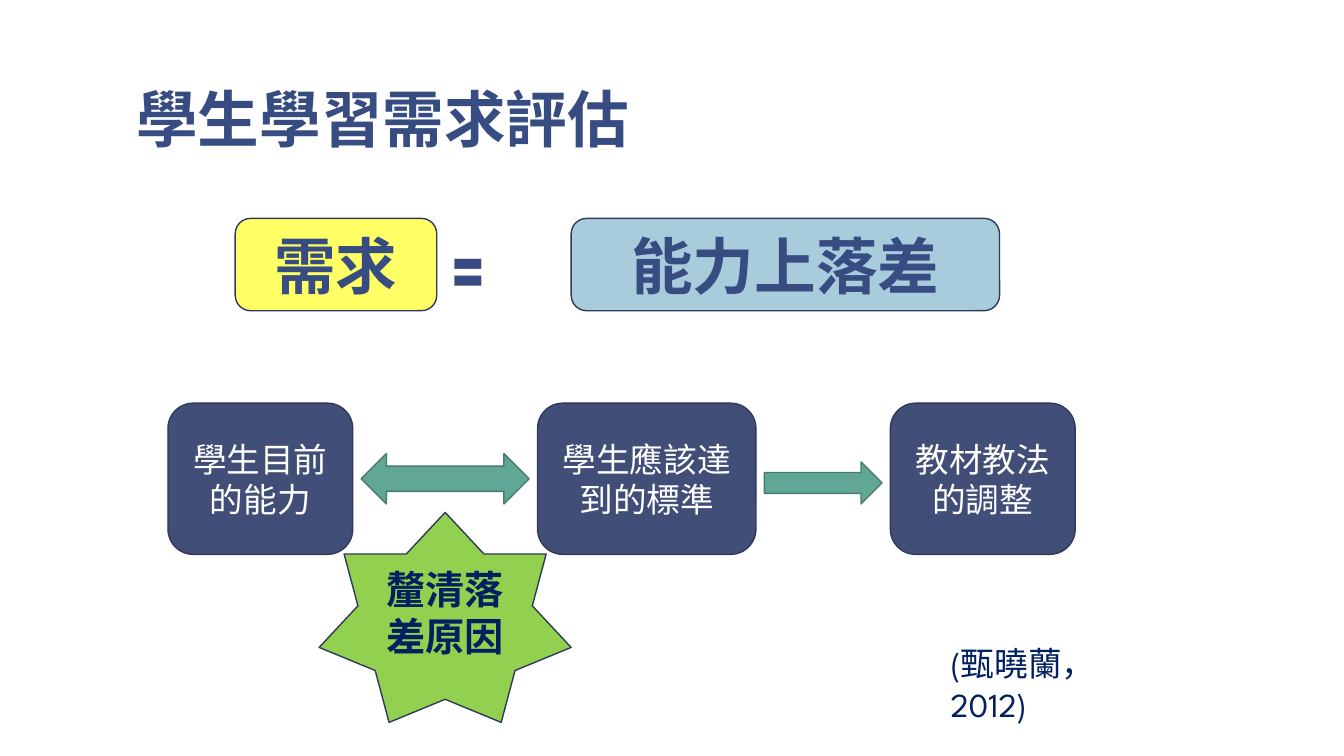
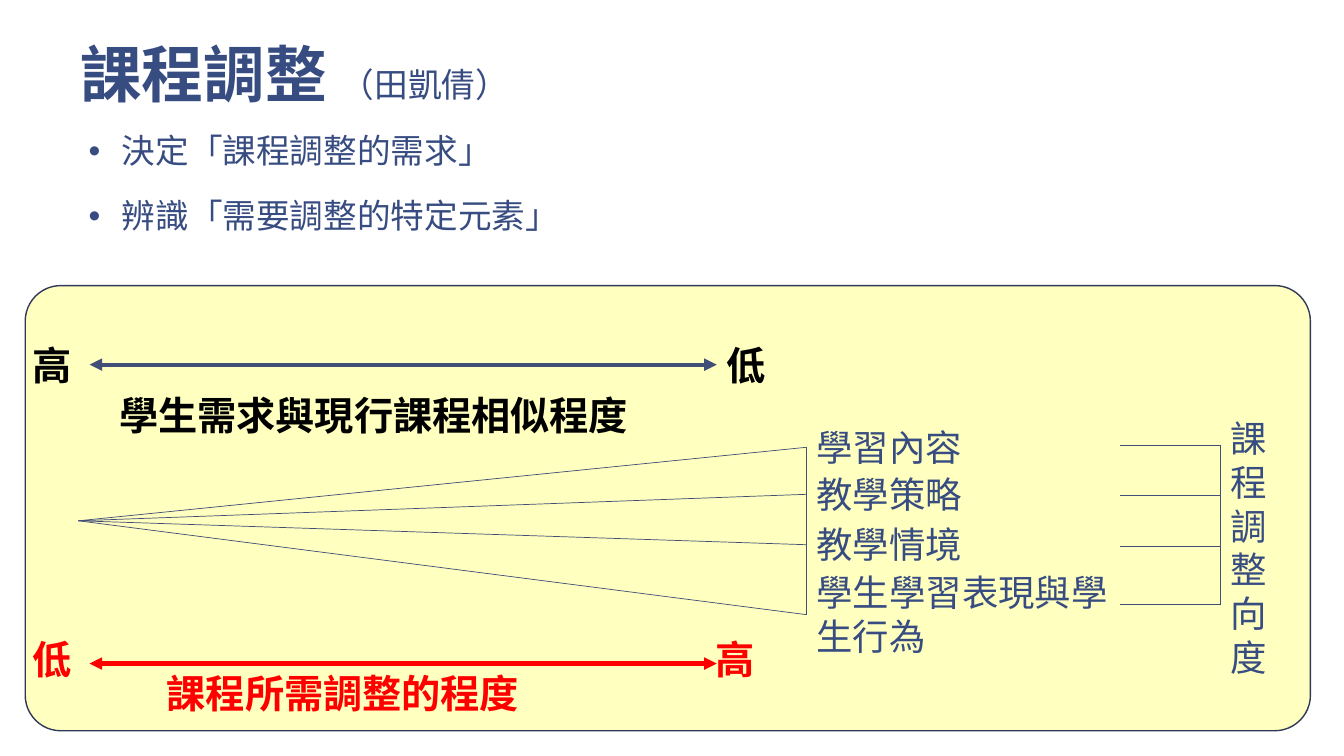
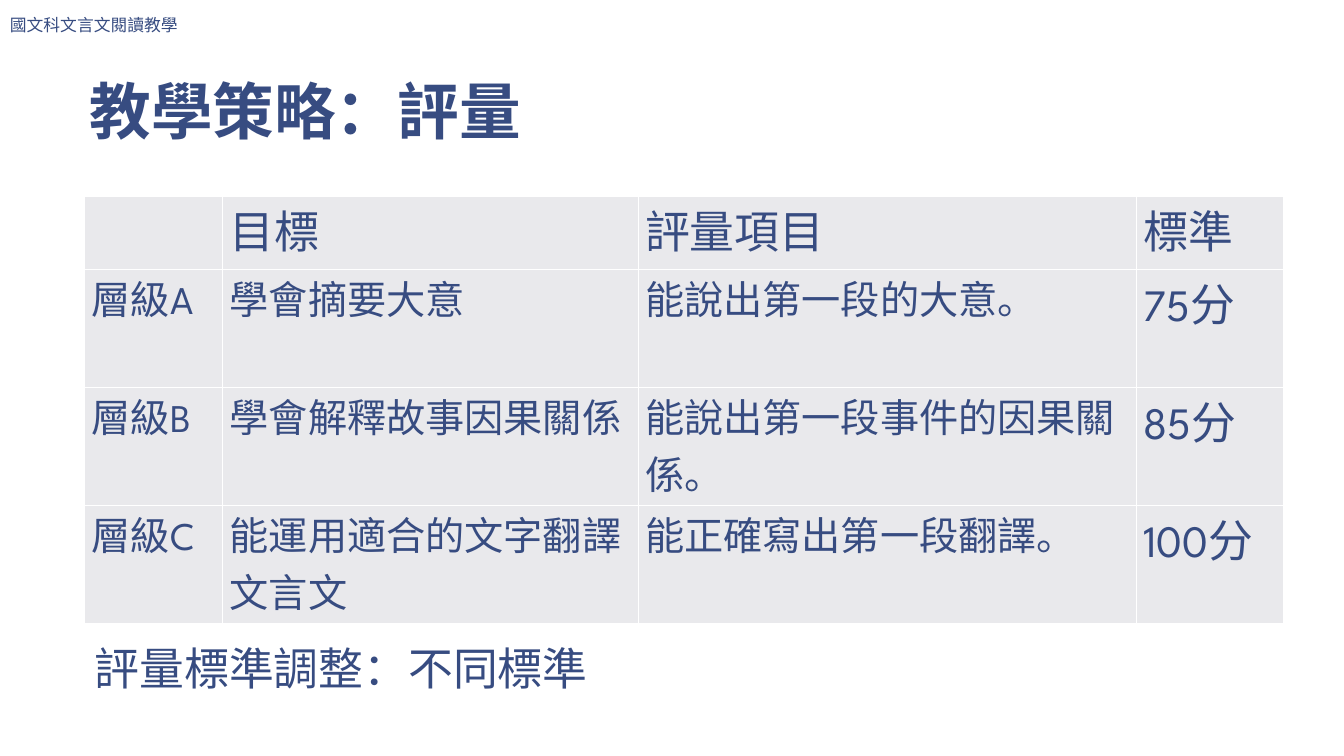
from dataclasses import dataclass
from typing import NamedTuple, Optional

from lxml.etree import SubElement
from pptx import Presentation
from pptx.dml.color import RGBColor
from pptx.enum.shapes import MSO_CONNECTOR, MSO_SHAPE
from pptx.enum.text import MSO_ANCHOR, PP_ALIGN
from pptx.oxml.ns import qn
from pptx.util import Inches, Pt

COLUMNS, ROWS = 160, 90
SLIDE_WIDTH, SLIDE_HEIGHT = Inches(13.33), Inches(7.5)
COLORS = {
    "ink": "374C81", "navy": "414E77", "outline": "303A58", "deep": "002060",
    "white": "FFFFFF", "black": "000000", "red": "FF0000",
    "need": "FFFF66", "gap": "A9CCDC", "star": "92D050",
    "arrow": "61A796", "arrow_edge": "487C6F", "panel": "FFFF00", "cell": "E9E9EC",
}
BODY_FONT, TITLE_FONT, HEADER_FONT = "League Spartan", "Arial", "Times New Roman"
LEFT_SIDE, RIGHT_SIDE = 1, 3
TITLE_INSETS = (0.13, 0.07)


class Area(NamedTuple):
    column: float
    row: float
    columns: float
    rows: float


@dataclass(frozen=True)
class TextStyle:
    size: float
    color: str = "ink"
    bold: bool = False
    font: str = BODY_FONT


@dataclass(frozen=True)
class Block:
    area: Area
    fill: str
    words: str = ""
    style: TextStyle = TextStyle(24, "white")
    outline: str = "outline"
    preset: MSO_SHAPE = MSO_SHAPE.ROUNDED_RECTANGLE


@dataclass(frozen=True)
class Scale:
    color: str
    line_color: str
    start: str
    start_area: Area
    end: str
    end_area: Area
    caption: str
    caption_area: Area
    line_row: Optional[float] = None


@dataclass(frozen=True)
class Dimension:
    words: str
    area: Area
    bracket_row: float


TITLE = TextStyle(44, bold=True, font=TITLE_FONT)
BULLET = TextStyle(24, font=TITLE_FONT)
DIMENSION = TextStyle(26)

NEED_BLOCKS = [
    Block(Area(28, 26, 24, 11), "need", "需求", TITLE),
    Block(Area(68, 26, 51, 11), "gap", "能力上落差", TITLE),
    Block(Area(20, 48, 22, 18), "navy", "學生目前的能力"),
    Block(Area(64, 48, 26, 18), "navy", "學生應該達到的標準"),
    Block(Area(106, 48, 22, 18), "navy", "教材教法的調整"),
    Block(Area(38, 61, 30, 25), "star", "釐清落差原因",
          TextStyle(28, "deep", True), preset=MSO_SHAPE.STAR_7_POINT),
    Block(Area(43, 54, 20, 6), "arrow", outline="arrow_edge",
          preset=MSO_SHAPE.LEFT_RIGHT_ARROW),
    Block(Area(91, 55, 14, 5), "arrow", outline="arrow_edge",
          preset=MSO_SHAPE.RIGHT_ARROW),
]
SCALES = [
    Scale("black", "navy", "高", Area(2.67, 40, 8, 6.83), "低", Area(85.33, 40, 8, 6.83),
          "學生需求與現行課程相似程度", Area(13, 46, 69.33, 6.83)),
    Scale("red", "red", "低", Area(2.67, 75.1, 8, 6.83), "高", Area(84, 75, 8, 6.83),
          "課程所需調整的程度", Area(18.67, 79.1, 60, 6.83), 79),
]
DIMENSIONS = [
    Dimension("學習內容", Area(96, 50, 28, 6.5), 53),
    Dimension("教學策略", Area(96, 55.6, 28, 6.5), 59),
    Dimension("教學情境", Area(96, 61.6, 28, 6.5), 65),
    Dimension("學生學習表現與學生行為", Area(96, 67.3, 40, 11.75), 72),
]
FAN_ORIGIN = (9.33, 62)
BRACKET_LEFT, BRACKET_RIGHT = 133.33, 145.33
LEVELS = [
    ("", "目標", "評量項目", "標準"),
    ("層級A", "學會摘要大意", "能說出第一段的大意。", "75分"),
    ("層級B", "學會解釋故事因果關係", "能說出第一段事件的因果關係。", "85分"),
    ("層級C", "能運用適合的文字翻譯文言文", "能正確寫出第一段翻譯。", "100分"),
]
LEVEL_WIDTHS = (1.37, 4.12, 4.94, 1.46)
LEVEL_HEIGHTS = (0.73, 1.17, 1.17, 1.17)


def rgb(name: str) -> RGBColor:
    return RGBColor.from_string(COLORS[name])


def across(columns: float) -> int:
    return round(SLIDE_WIDTH * columns / COLUMNS)


def down(rows: float) -> int:
    return round(SLIDE_HEIGHT * rows / ROWS)


def place(area: Area) -> tuple:
    return across(area.column), down(area.row), across(area.columns), down(area.rows)


def style_run(run, style: TextStyle) -> None:
    run.font.name = style.font
    run.font.size = Pt(style.size)
    run.font.bold = style.bold
    run.font.color.rgb = rgb(style.color)


def style_frame(frame, style: TextStyle) -> None:
    for paragraph in frame.paragraphs:
        for run in paragraph.runs:
            style_run(run, style)


def add_words(slide, words: str, area: Area, style: TextStyle,
              insets: tuple = (0.1, 0.05), anchor=MSO_ANCHOR.TOP):
    box = slide.shapes.add_textbox(*place(area))
    frame = box.text_frame
    frame.word_wrap = True
    frame.vertical_anchor = anchor
    frame.margin_left = frame.margin_right = Inches(insets[0])
    frame.margin_top = frame.margin_bottom = Inches(insets[1])
    frame.text = words
    style_frame(frame, style)
    return box


def add_title(slide, words: str, area: Area):
    title = add_words(slide, words, area, TITLE, TITLE_INSETS, MSO_ANCHOR.BOTTOM)
    title.text_frame.paragraphs[0].line_spacing = 0.85
    return title


def add_block(slide, block: Block):
    shape = slide.shapes.add_shape(block.preset, *place(block.area))
    shape.shadow.inherit = False
    shape.fill.solid()
    shape.fill.fore_color.rgb = rgb(block.fill)
    shape.line.color.rgb = rgb(block.outline)
    shape.line.width = Pt(1)
    if block.words:
        frame = shape.text_frame
        frame.text = block.words
        frame.vertical_anchor = MSO_ANCHOR.MIDDLE
        frame.paragraphs[0].alignment = PP_ALIGN.CENTER
        style_frame(frame, block.style)
    return shape


def add_line(slide, start: tuple, end: tuple, color: str = "navy",
             width: float = 0.5, arrows: bool = False):
    line = slide.shapes.add_connector(
        MSO_CONNECTOR.STRAIGHT, across(start[0]), down(start[1]), across(end[0]), down(end[1]))
    line.line.color.rgb = rgb(color)
    line.line.width = Pt(width)
    if arrows:
        for tag in ("a:headEnd", "a:tailEnd"):
            SubElement(line.line._get_or_add_ln(), qn(tag), type="triangle")
    SubElement(line._element.spPr, qn("a:effectLst"))
    return line


def add_bullets(slide, words: list, area: Area) -> None:
    box = add_words(slide, "\n".join(words), area, BULLET, TITLE_INSETS)
    for index, paragraph in enumerate(box.text_frame.paragraphs):
        paragraph.line_spacing = 0.95
        if index:
            paragraph.space_before = Pt(18.7)
        properties = paragraph._p.get_or_add_pPr()
        properties.set("marL", str(Inches(0.33)))
        properties.set("indent", str(-Inches(0.33)))
        SubElement(properties, qn("a:buFont"), typeface="Arial")
        SubElement(properties, qn("a:buChar"), char="•")


def add_scale(slide, scale: Scale) -> None:
    style = TextStyle(28, scale.color, True)
    start = add_words(slide, scale.start, scale.start_area, style)
    end = add_words(slide, scale.end, scale.end_area, style)
    add_words(slide, scale.caption, scale.caption_area, style)
    row = scale.line_row or scale.start_area.row + scale.start_area.rows / 2
    line = add_line(slide, (10.67, row), (85.33, row), scale.line_color, 3, True)
    if scale.line_row is None:
        line.begin_connect(start, RIGHT_SIDE)
        line.end_connect(end, LEFT_SIDE)


def add_dimensions(slide) -> None:
    items = []
    for dimension in DIMENSIONS:
        item = add_words(slide, dimension.words, dimension.area, DIMENSION)
        add_line(slide, FAN_ORIGIN, FAN_ORIGIN).end_connect(item, LEFT_SIDE)
        items.append(item)
    edge = add_line(slide, FAN_ORIGIN, FAN_ORIGIN)
    edge.begin_connect(items[0], LEFT_SIDE)
    edge.end_connect(items[-1], LEFT_SIDE)

    heading_area = Area(BRACKET_RIGHT, 49, 9.33, 32)
    heading = add_words(slide, "課程調整向度", heading_area, DIMENSION)
    heading_middle = heading_area.row + heading_area.rows / 2
    bracket_rows = [dimension.bracket_row for dimension in DIMENSIONS]
    for row in bracket_rows:
        branch = add_line(slide, (BRACKET_LEFT, row), (BRACKET_RIGHT, row))
        if row == heading_middle:
            branch.end_connect(heading, LEFT_SIDE)
    add_line(slide, (BRACKET_RIGHT, bracket_rows[0]), (BRACKET_RIGHT, bracket_rows[-1]))


def format_cell(cell, words: str, size: float) -> None:
    cell.text = words
    cell.margin_left = cell.margin_right = Inches(0.07)
    cell.margin_top = cell.margin_bottom = 0
    style_frame(cell.text_frame, TextStyle(size))
    properties = cell._tc.get_or_add_tcPr()
    for tag in ("a:lnL", "a:lnR", "a:lnT", "a:lnB"):
        border = SubElement(properties, qn(tag), w=str(Pt(1)))
        SubElement(SubElement(border, qn("a:solidFill")), qn("a:srgbClr"), val=COLORS["white"])
    cell.fill.solid()
    cell.fill.fore_color.rgb = rgb("cell")


def add_levels(slide) -> None:
    table = slide.shapes.add_table(
        len(LEVELS), len(LEVEL_WIDTHS), *place(Area(10.08, 23.33, 142.7, 51))).table
    table.first_row = table.horz_banding = False
    for column, width in zip(table.columns, LEVEL_WIDTHS):
        column.width = Inches(width)
    for row, height in zip(table.rows, LEVEL_HEIGHTS):
        row.height = Inches(height)
    last = len(LEVEL_WIDTHS) - 1
    for row, level in enumerate(LEVELS):
        for column, words in enumerate(level):
            format_cell(table.cell(row, column), words, 32 if row == 0 or column == last else 28)


def build_needs(slide) -> None:
    add_title(slide, "學生學習需求評估", Area(14.67, 8, 67.33, 11.33))
    add_words(slide, "〓", Area(53.8, 30, 5, 6), BULLET, (0, 0))
    for block in NEED_BLOCKS:
        add_block(slide, block)
    add_words(slide, "(甄曉蘭，2012)", Area(112, 76, 24, 11), TextStyle(24, "deep"))


def build_adjustment(slide) -> None:
    panel = add_block(slide, Block(Area(3, 34, 153, 53), "panel"))
    panel.adjustments[0] = 0.08
    tint = panel._element.spPr.find(qn("a:solidFill")).find(qn("a:srgbClr"))
    SubElement(tint, qn("a:alpha"), val="25000")
    title = add_title(slide, "課程調整 ", Area(8, 4, 72, 10))
    author = title.text_frame.paragraphs[0].add_run()
    author.text = "（田凱倩）"
    style_run(author, BULLET)
    add_bullets(slide, ["決定「課程調整的需求」", "辨識「需要調整的特定元素」"], Area(9, 15, 144, 14.5))
    for scale in SCALES:
        add_scale(slide, scale)
    add_dimensions(slide)


def build_assessment(slide) -> None:
    add_title(slide, "教學策略：評量", Area(9.1, 7.2, 57.7, 11.2))
    add_levels(slide)
    add_words(slide, "國文科文言文閱讀教學", Area(0, 0, COLUMNS, 6),
              TextStyle(12, font=HEADER_FONT), anchor=MSO_ANCHOR.MIDDLE)
    remark = add_words(slide, "評量標準調整：不同標準", Area(10.08, 76.2, 73.7, 7.3), TextStyle(32))
    remark.text_frame.paragraphs[0].line_spacing = 0.95


def main() -> None:
    deck = Presentation()
    deck.slide_width, deck.slide_height = SLIDE_WIDTH, SLIDE_HEIGHT
    for build in (build_needs, build_adjustment, build_assessment):
        build(deck.slides.add_slide(deck.slide_layouts[6]))
    deck.save("out.pptx")


if __name__ == "__main__":
    main()
